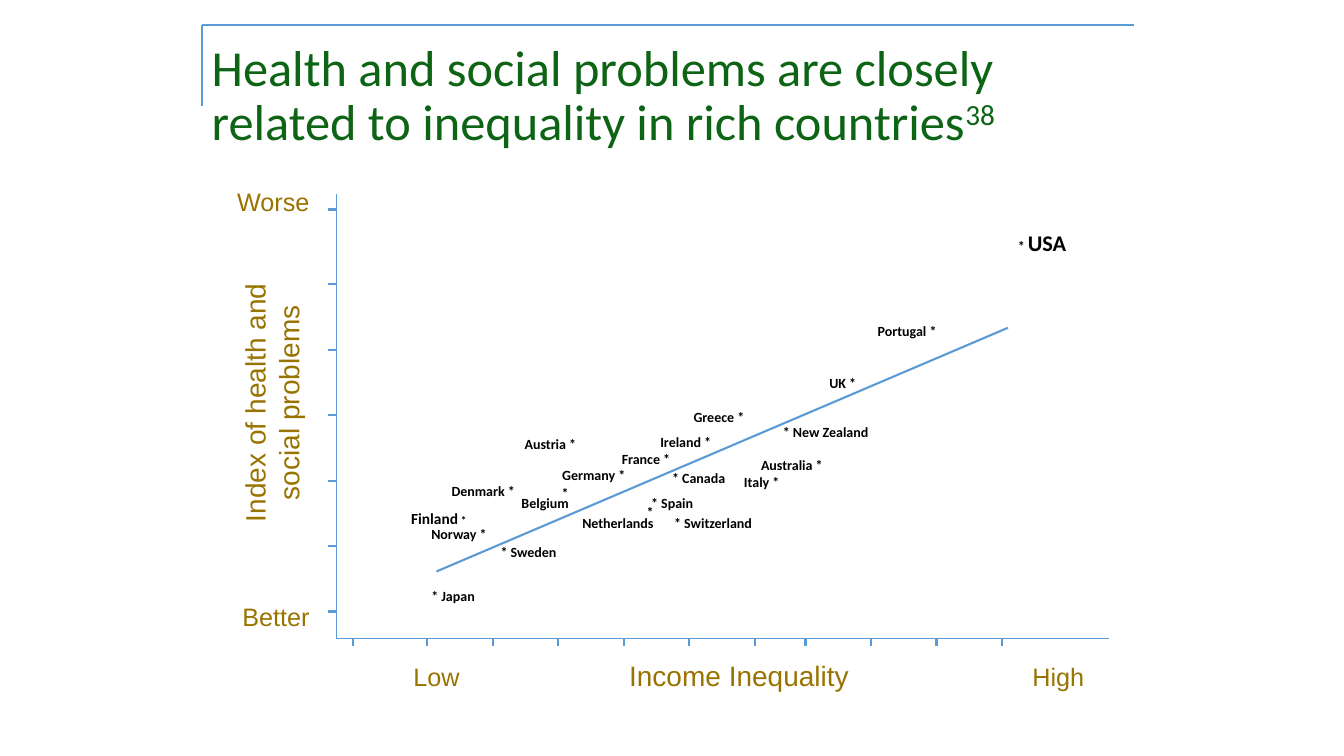
from lxml import etree
from pptx import Presentation
from pptx import util as u
from pptx.dml.color import RGBColor
from pptx.enum import shapes, text
from pptx.oxml import ns

COLORS = {"title": "0C6414", "axis text": "997300", "line": "5B9BD5",
          "country": "000000", "white": "FFFFFF"}
LEFT, CENTER, RIGHT = text.PP_ALIGN.LEFT, text.PP_ALIGN.CENTER, text.PP_ALIGN.RIGHT

# Content; all lengths in cm
TITLE = "Health and social problems are closely related to inequality in rich countries"
TITLE_NOTE = "38"

# Words, box (left, top, width, height), size, alignment, filled, rotation
AXIS_LABELS = [
    ("Index of health and social problems", (2.82, 9.17, 8.05, 1.96), 20, CENTER, True, 270),
    ("Worse", (5.51, 4.57, 2.54, 1.02), 18, RIGHT, True, 0),
    ("Better", (5.51, 15.04, 2.54, 1.02), 18, RIGHT, False, 0),
    ("Low", (9.73, 16.54, 2.54, 1.02), 18, CENTER, True, 0),
    ("High", (25.4, 16.54, 2.54, 1.02), 18, CENTER, True, 0),
    ("Income Inequality", (14.6, 16.46, 8.05, 1.12), 20, CENTER, True, 0),
]

# One-line country labels: words, left, top, width
COUNTRIES = [
    ("Germany *", 13.92, 11.63, 2.13),
    ("UK *", 20.65, 9.32, 1.19),
    ("* Switzerland", 16.74, 12.85, 2.51),
    ("Portugal *", 21.87, 8.0, 2.03),
    ("Australia *", 18.93, 11.38, 2.1),
    ("Denmark *", 11.13, 12.04, 2.13),
    ("* New Zealand", 19.48, 10.54, 2.77),
    ("Italy *", 18.5, 11.81, 1.42),
    ("Norway *", 10.62, 13.13, 1.93),
    ("* Japan", 10.62, 14.68, 1.63),
    ("* Spain", 16.16, 12.34, 1.6),
    ("* Canada", 16.69, 11.71, 1.85),
    ("France *", 15.42, 11.23, 1.75),
    ("Ireland *", 16.39, 10.8, 1.83),
    ("Greece *", 17.23, 10.16, 1.8),
]
# Tight labels: lines, box, alignment, line spacing in points
TIGHT_COUNTRIES = [
    (["*", "Belgium"], (12.85, 12.27, 1.73, 0.76), RIGHT, 7),
    (["*", "Netherlands"], (14.38, 12.7, 2.34, 0.84), RIGHT, 8),
    (["Austria *"], (12.7, 11.0, 2.34, 0.56), CENTER, 8),
    (["* Sweden"], (12.34, 13.72, 1.96, 0.53), CENTER, 8),
]
# Labels of two sizes: runs, box
MIXED_COUNTRIES = [
    ([("* ", 10), ("USA", 16)], (25.4, 5.66, 1.75, 0.94)),
    ([("Finland", 11), (" *", 8)], (10.11, 12.7, 1.91, 0.74)),
]

# Axes and ticks
AXIS_X, AXIS_Y = 8.47, 16.08
AXIS_TOP, AXIS_RIGHT = 4.88, 27.94
TICK, STEP = 0.21, 1.65
TICKS_Y = [5.28] + [7.16 + STEP * i for i in range(6)]
TICKS_X = [8.89] + [10.77 + STEP * i for i in range(6)] + [20.3 + STEP * i for i in range(4)]
TREND = (11.0, 14.4, 25.4, 8.26)
TITLE_FRAME = [(5.08, 0.64, 28.58, 0.64), (5.08, 2.67, 5.08, 0.64)]


def color(name):
    return RGBColor.from_string(COLORS[name])


def add_run(paragraph, words, size, font, color_name, bold=False):
    run = paragraph.add_run()
    run.text = words
    run.font.size, run.font.name, run.font.bold = u.Pt(size), font, bold
    run.font.color.rgb = color(color_name)
    return run


def add_line(slide, ends, width=1.5):
    line = slide.shapes.add_connector(shapes.MSO_CONNECTOR.STRAIGHT, *map(u.Cm, ends))
    line.line.color.rgb = color("line")
    line.line.width = u.Pt(width)
    etree.SubElement(line._element.spPr, ns.qn("a:effectLst"))


def add_box(slide, box, lines, font, color_name, alignment=LEFT, bold=False,
            wrap=False, spacing=None):
    """Each line is a list of (words, size) runs."""
    shape = slide.shapes.add_textbox(*map(u.Cm, box))
    frame = shape.text_frame
    frame.word_wrap = wrap
    for index, runs in enumerate(lines):
        paragraph = frame.add_paragraph() if index else frame.paragraphs[0]
        paragraph.alignment = alignment
        if spacing:
            paragraph.line_spacing = u.Pt(spacing)
        for words, size in runs:
            add_run(paragraph, words, size, font, color_name, bold)
    return shape


def add_title(slide):
    title = slide.shapes.title
    title.left, title.top, title.width, title.height = map(u.Cm, (5.08, 0.86, 23.93, 3.18))
    frame = title.text_frame
    frame.word_wrap = True
    frame.auto_size = text.MSO_AUTO_SIZE.NONE
    frame.vertical_anchor = text.MSO_ANCHOR.MIDDLE
    paragraph = frame.paragraphs[0]
    paragraph.alignment, paragraph.line_spacing = LEFT, 0.9
    add_run(paragraph, TITLE, 36, "Calibri", "title")
    note = add_run(paragraph, TITLE_NOTE, 36, "Calibri", "title")
    note._r.get_or_add_rPr().set("baseline", "30000")


def main():
    presentation = Presentation()
    presentation.slide_width, presentation.slide_height = u.Cm(33.87), u.Cm(19.05)
    slide = presentation.slides.add_slide(presentation.slide_layouts[5])
    add_title(slide)

    # Axis labels
    for words, box, size, alignment, filled, rotation in AXIS_LABELS:
        label = add_box(slide, box, [[(words, size)]], "Arial", "axis text", alignment, wrap=True)
        label.rotation = rotation
        if filled:
            label.fill.solid()
            label.fill.fore_color.rgb = color("white")

    # Axes with ticks, and the title frame
    add_line(slide, (AXIS_X, AXIS_TOP, AXIS_X, AXIS_Y), 0.5)
    add_line(slide, (AXIS_X, AXIS_Y, AXIS_RIGHT, AXIS_Y), 0.5)
    for y in TICKS_Y:
        add_line(slide, (AXIS_X - TICK, y, AXIS_X, y))
    for x in TICKS_X:
        add_line(slide, (x, AXIS_Y + TICK, x, AXIS_Y))
    for ends in TITLE_FRAME:
        add_line(slide, ends)

    # Countries
    for words, left, top, width in COUNTRIES:
        add_box(slide, (left, top, width, 0.69), [[(words, 10)]], "Calibri", "country", bold=True)
    for lines, box, alignment, spacing in TIGHT_COUNTRIES:
        add_box(slide, box, [[(words, 10)] for words in lines], "Calibri", "country",
                alignment, bold=True, spacing=spacing)
    for runs, box in MIXED_COUNTRIES:
        add_box(slide, box, [runs], "Calibri", "country", bold=True)

    # Trend
    add_line(slide, TREND)
    presentation.save("out.pptx")


if __name__ == "__main__":
    main()
